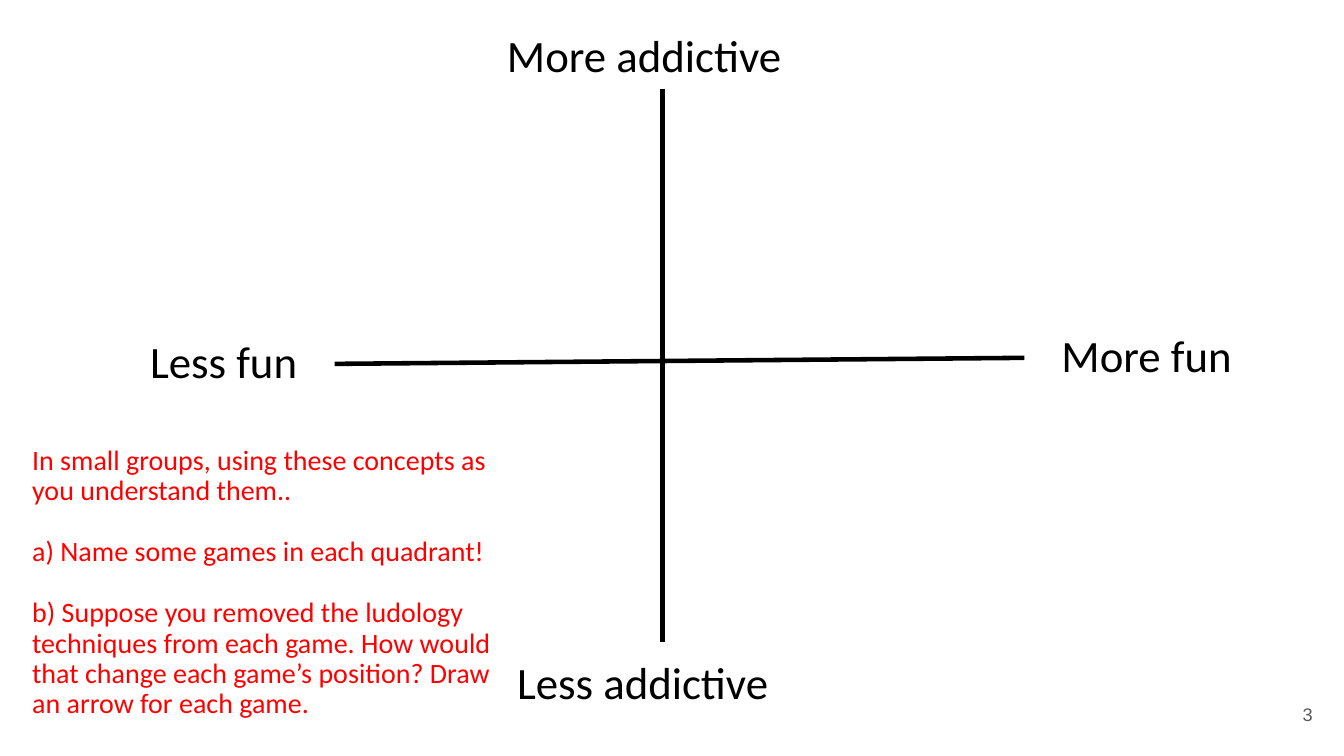
from pptx import Presentation
from pptx.dml.color import RGBColor
from pptx.enum.text import MSO_ANCHOR, MSO_AUTO_SIZE, PP_ALIGN
from pptx.oxml.ns import qn
from pptx.util import Inches, Pt
from lxml import etree

TOP, MIDDLE = MSO_ANCHOR.TOP, MSO_ANCHOR.MIDDLE
LEFT, RIGHT = PP_ALIGN.LEFT, PP_ALIGN.RIGHT
FIT_SHAPE, NO_FIT = MSO_AUTO_SIZE.SHAPE_TO_FIT_TEXT, MSO_AUTO_SIZE.NONE

COLOURS = {"axis": "000000", "label": "000000", "task": "FF0000",
           "number": "595959"}

# Axes: start x, start y, end x, end y
AXES = [
    (6.57, 0.88, 6.57, 6.37),
    (10.16, 3.55, 3.32, 3.61),
]

# Axis end labels: text, left, top, width
LABELS = [
    ("More fun", 10.43, 3.26, 1.93),
    ("Less fun", 1.39, 3.32, 1.93),
    ("More addictive", 4.93, 0.29, 3.27),
    ("Less addictive", 5.03, 6.51, 3.27),
]
LABEL_HEIGHT = 0.59

TASK = [
    "In small groups, using these concepts as you understand them..",
    "a) Name some games in each quadrant!",
    "b) Suppose you removed the ludology techniques from each game. "
    "How would that change each game’s position? Draw an arrow for each game.",
]
TASK_BOX = (0.22, 4.38, 4.98, 3.13)
TASK_GAP = 22  # points, one line of text

PAGE_NUMBER = "3"
NUMBER_BOX = (12.35, 6.8, 0.8, 0.57)


def add_axis(page, x1, y1, x2, y2):
    axis = page.shapes.add_connector(
        1, Inches(x1), Inches(y1), Inches(x2), Inches(y2))
    axis.line.color.rgb = RGBColor.from_string(COLOURS["axis"])
    axis.line.width = Pt(3.25)
    etree.SubElement(axis._element.spPr, qn("a:effectLst"))


def add_text(page, place, lines, size, colour, font="Calibri", spacing=0.9,
             gap=0, align=LEFT, anchor=TOP, insets=(0.1, 0.05), fit=FIT_SHAPE):
    box = page.shapes.add_textbox(*[Inches(length) for length in place])
    frame = box.text_frame
    frame.word_wrap = True
    frame.auto_size = fit
    frame.vertical_anchor = anchor
    frame.margin_left = frame.margin_right = Inches(insets[0])
    frame.margin_top = frame.margin_bottom = Inches(insets[1])
    for index, line in enumerate(lines):
        para = frame.add_paragraph() if index else frame.paragraphs[0]
        para.alignment = align
        para.line_spacing = spacing
        para.space_before = Pt(gap if index else 0)
        span = para.add_run()
        span.text = line
        span.font.name = font
        span.font.size = Pt(size)
        span.font.color.rgb = RGBColor.from_string(COLOURS[colour])


def main():
    deck = Presentation()
    deck.slide_width, deck.slide_height = Inches(13.33), Inches(7.5)
    page = deck.slides.add_slide(deck.slide_layouts[6])

    # Page number
    add_text(page, NUMBER_BOX, [PAGE_NUMBER], 13, "number", font="Arial",
             spacing=1.0, align=RIGHT, anchor=MIDDLE, insets=(0.13, 0.13),
             fit=NO_FIT)

    # Crossed axes and their end labels
    for ends in AXES:
        add_axis(page, *ends)
    for text, left, top, width in LABELS:
        add_text(page, (left, top, width, LABEL_HEIGHT), [text], 32, "label")

    # Group task
    add_text(page, TASK_BOX, TASK, 20, "task", gap=TASK_GAP)

    deck.save("out.pptx")


if __name__ == "__main__":
    main()
